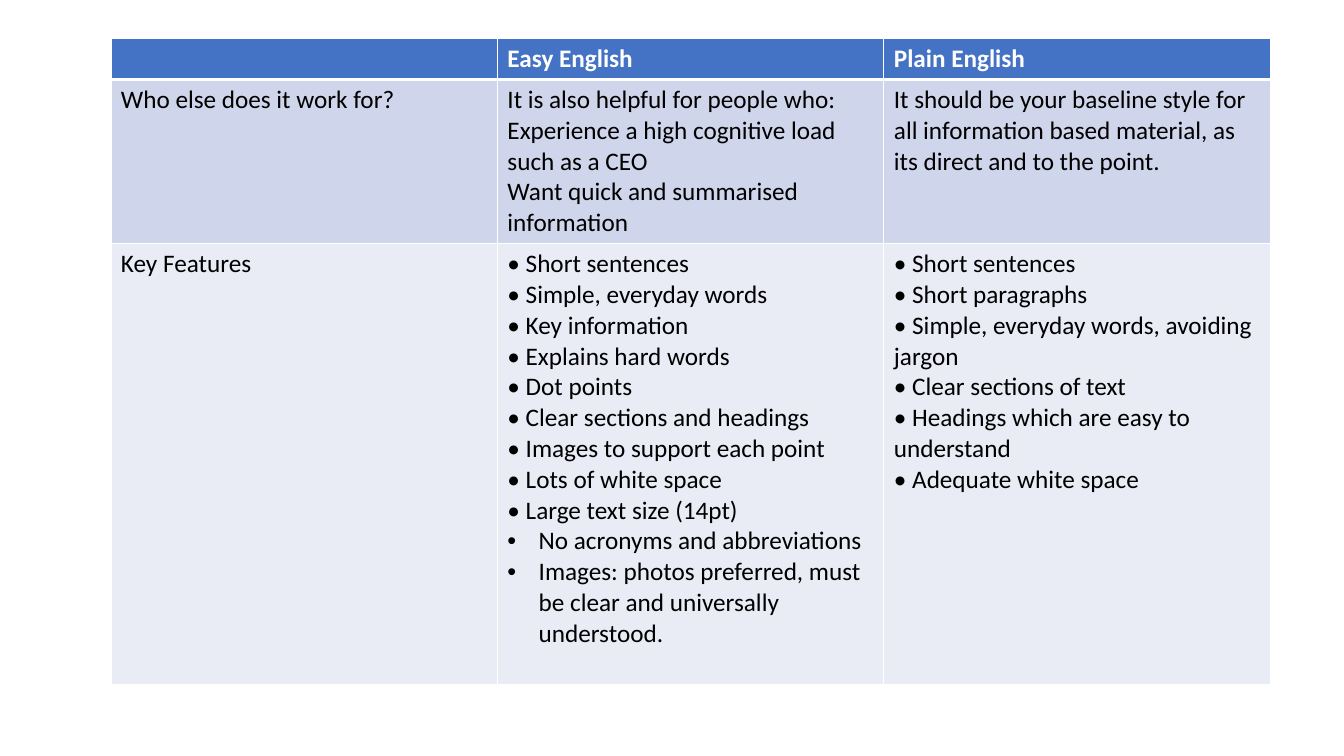
from lxml import etree
from pptx import Presentation
from pptx.dml.color import RGBColor
from pptx.oxml.ns import qn
from pptx.util import Inches, Pt

WHITE = RGBColor(0xFF, 0xFF, 0xFF)
BLACK = RGBColor(0x00, 0x00, 0x00)
HEADER_BLUE = RGBColor(0x44, 0x72, 0xC4)
BAND_DARK = RGBColor(0xCF, 0xD5, 0xEA)
BAND_LIGHT = RGBColor(0xE9, 0xEB, 0xF5)

ROW_HEIGHTS = [0.41, 1.63, 4.37]
ROW_FILLS = [HEADER_BLUE, BAND_DARK, BAND_LIGHT]
HANGING = "hanging"  # marks a paragraph with an indented bullet

# Each cell is a list of paragraphs
ROWS = [
    [[], ["Easy English"], ["Plain English"]],
    [
        ["Who else does it work for?"],
        [
            "It is also helpful for people who:",
            "Experience a high cognitive load such as a CEO",
            "Want quick and summarised information",
        ],
        ["It should be your baseline style for all information based "
         "material, as its direct and to the point."],
    ],
    [
        ["Key Features"],
        [
            "• Short sentences",
            "• Simple, everyday words",
            "• Key information",
            "• Explains hard words",
            "• Dot points",
            "• Clear sections and headings",
            "• Images to support each point",
            "• Lots of white space",
            "• Large text size (14pt)",
            (HANGING, "No acronyms and abbreviations"),
            (HANGING, "Images: photos preferred, must be clear and "
                      "universally understood."),
        ],
        [
            "• Short sentences",
            "• Short paragraphs",
            "• Simple, everyday words, avoiding jargon",
            "• Clear sections of text",
            "• Headings which are easy to understand",
            "• Adequate white space",
        ],
    ],
]


def set_borders(cell, widths):
    """Draw white borders; widths maps each side (L, R, T, B) to points."""
    properties = cell._tc.get_or_add_tcPr()
    for position, (side, width) in enumerate(widths.items()):
        line = etree.Element(qn(f"a:ln{side}"), w=str(Pt(width)))
        fill = etree.SubElement(line, qn("a:solidFill"))
        etree.SubElement(fill, qn("a:srgbClr"), val=str(WHITE))
        properties.insert(position, line)


def set_hanging_bullet(para):
    properties = para._p.get_or_add_pPr()
    properties.set("marL", str(Inches(0.31)))
    properties.set("indent", str(-Inches(0.31)))
    etree.SubElement(properties, qn("a:buFont"), typeface="Arial")
    etree.SubElement(properties, qn("a:buChar"), char="•")


def fill_cell(cell, paragraphs, is_header):
    frame = cell.text_frame
    for index, entry in enumerate(paragraphs):
        para = frame.paragraphs[0] if index == 0 else frame.add_paragraph()
        if isinstance(entry, tuple):
            para.text = entry[1]
            set_hanging_bullet(para)
        else:
            para.text = entry
        para.font.name = "Calibri"
        para.font.size = Pt(18)
        para.font.bold = is_header
        para.font.color.rgb = WHITE if is_header else BLACK


def add_comparison_table(slide, left, top, width):
    frame = slide.shapes.add_table(
        len(ROWS), len(ROWS[0]), left, top, width, Inches(sum(ROW_HEIGHTS)))
    table = frame.table
    for column in table.columns:
        column.width = width // len(ROWS[0])

    for row_index, row in enumerate(ROWS):
        table.rows[row_index].height = Inches(ROW_HEIGHTS[row_index])
        for column_index, paragraphs in enumerate(row):
            cell = table.cell(row_index, column_index)
            cell.fill.solid()
            cell.fill.fore_color.rgb = ROW_FILLS[row_index]
            # The rule under the header is heavier than the rest
            set_borders(cell, {
                "L": 1,
                "R": 1,
                "T": 3 if row_index == 1 else 1,
                "B": 3 if row_index == 0 else 1,
            })
            fill_cell(cell, paragraphs, is_header=row_index == 0)


def main():
    deck = Presentation()
    deck.slide_width = Inches(13.33)
    deck.slide_height = Inches(7.5)
    slide = deck.slides.add_slide(deck.slide_layouts[6])
    add_comparison_table(slide, Inches(1.1), Inches(0.38), Inches(11.5))
    deck.save("out.pptx")


if __name__ == "__main__":
    main()
